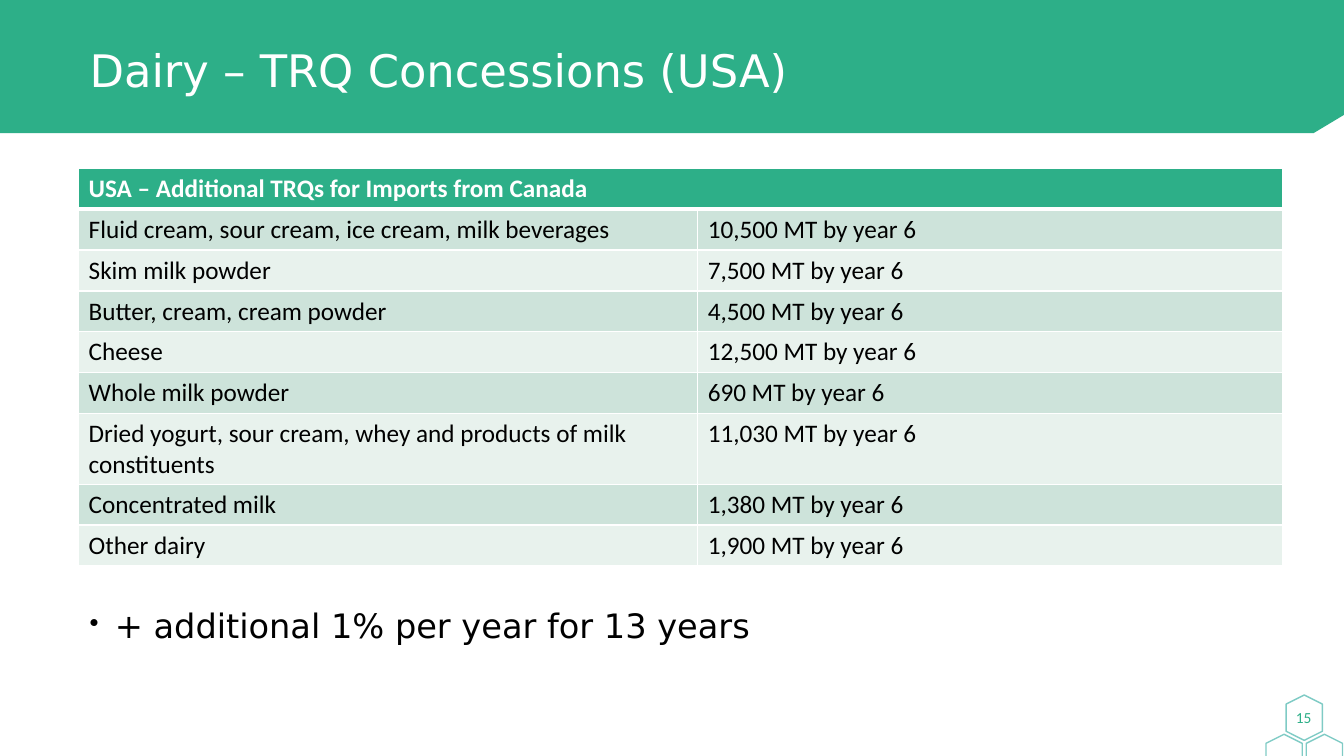
import dataclasses

import lxml.etree
import pptx
import pptx.dml.color
import pptx.enum.shapes
import pptx.enum.text
import pptx.oxml
import pptx.oxml.ns
import pptx.util

ALIGN = pptx.enum.text.PP_ALIGN
ANCHOR = pptx.enum.text.MSO_ANCHOR
qn = pptx.oxml.ns.qn


@dataclasses.dataclass(frozen=True)
class Theme:
    green: str = "2DAF88"
    teal: str = "00998D"
    white: str = "FFFFFF"
    black: str = "000000"
    bands: tuple = ("CDE3DA", "E8F2ED")
    heading_font: str = "DejaVu Sans"
    body_font: str = "Calibri"
    title_size: int = 32
    bullet_size: int = 24
    table_size: int = 18
    number_size: int = 11


THEME = Theme()
WIDTH = pptx.util.Inches(13.33)
HEIGHT = pptx.util.Inches(7.5)

QUOTAS = [
    ("Fluid cream, sour cream, ice cream, milk beverages", "10,500"),
    ("Skim milk powder", "7,500"),
    ("Butter, cream, cream powder", "4,500"),
    ("Cheese", "12,500"),
    ("Whole milk powder", "690"),
    ("Dried yogurt, sour cream, whey and products of milk constituents", "11,030"),
    ("Concentrated milk", "1,380"),
    ("Other dairy", "1,900"),
]


def across(percent):
    return round(WIDTH * percent / 100)


def down(percent):
    return round(HEIGHT * percent / 100)


def rgb(color):
    return pptx.dml.color.RGBColor.from_string(color)


def paint(fill, color):
    fill.solid()
    fill.fore_color.rgb = rgb(color)


def write(tf, text, *, size, color, font=THEME.body_font, bold=False,
          align=ALIGN.LEFT, spacing=None, bullet=None):
    p = tf.paragraphs[0]
    p.alignment = align
    if spacing:
        p.line_spacing = spacing
    if bullet:
        pPr = p._p.get_or_add_pPr()
        indent = pptx.util.Inches(0.25)
        pPr.set("marL", str(indent))
        pPr.set("indent", str(-indent))
        lxml.etree.SubElement(pPr, qn("a:buSzPct")).set("val", "80000")
        lxml.etree.SubElement(pPr, qn("a:buChar")).set("char", bullet)
    r = p.add_run()
    r.text = text
    r.font.name = font
    r.font.size = pptx.util.Pt(size)
    r.font.bold = bold
    r.font.color.rgb = rgb(color)


def add_text(s, text, left, top, width, height, *, anchor=ANCHOR.TOP, **style):
    sp = s.shapes.add_textbox(across(left), down(top), across(width), down(height))
    tf = sp.text_frame
    tf.word_wrap = True
    tf.vertical_anchor = anchor
    write(tf, text, **style)


def add_banner(s):
    corners = [(100, 0), (100, 15.2), (97.75, 17.6), (0, 17.6)]
    builder = s.shapes.build_freeform(0, 0)
    builder.add_line_segments([(across(x), down(y)) for x, y in corners])
    sp = builder.convert_to_shape()
    sp.shadow.inherit = False
    paint(sp.fill, THEME.green)
    sp.line.fill.background()


def add_hexagon(s, center_x, center_y):
    width, height = pptx.util.Inches(0.45), pptx.util.Inches(0.36)
    sp = s.shapes.add_shape(
        pptx.enum.shapes.MSO_SHAPE.HEXAGON,
        across(center_x) - width // 2, down(center_y) - height // 2, width, height)
    sp.rotation = 90
    sp.shadow.inherit = False
    sp.fill.background()
    sp.line.width = pptx.util.Pt(1)
    paint(sp.line.fill, THEME.teal)
    color = sp.line._ln.find(".//" + qn("a:srgbClr"))
    lxml.etree.SubElement(color, qn("a:alpha")).set("val", "50000")


def add_border(cell, side, points):
    ln = lxml.etree.SubElement(cell._tc.get_or_add_tcPr(), qn("a:ln" + side))
    ln.set("w", str(pptx.util.Pt(points)))
    fill = lxml.etree.SubElement(ln, qn("a:solidFill"))
    lxml.etree.SubElement(fill, qn("a:srgbClr")).set("val", THEME.white)


def format_cell(cell, row):
    heavy = {0: "B", 1: "T"}.get(row)
    for side in "LRTB":
        add_border(cell, side, 3 if side == heavy else 1)
    paint(cell.fill, THEME.bands[(row - 1) % 2] if row else THEME.green)


def add_quota_table(s, heading, quotas, left, top, columns, row_height):
    rows = [(heading, "")] + [(name, f"{amount} MT by year 6") for name, amount in quotas]
    table = s.shapes.add_table(
        len(rows), len(columns), across(left), down(top),
        across(sum(columns)), down(row_height * len(rows))).table
    for column, width in zip(table.columns, columns):
        column.width = across(width)
    table.cell(0, 0).merge(table.cell(0, len(columns) - 1))
    for i, texts in enumerate(rows):
        table.rows[i].height = down(row_height)
        for j, text in enumerate(texts):
            cell = table.cell(i, j)
            format_cell(cell, i)
            if text:
                write(cell.text_frame, text, size=THEME.table_size, bold=i == 0,
                      color=THEME.black if i else THEME.white)


def main():
    prs = pptx.Presentation()
    prs.slide_width, prs.slide_height = WIDTH, HEIGHT
    s = prs.slides.add_slide(prs.slide_layouts[6])
    add_banner(s)
    for x, y in [(97.04, 94.93), (98.54, 100.13), (95.54, 100.13)]:
        add_hexagon(s, x, y)
    add_text(s, "Dairy – TRQ Concessions (USA)", 5.93, 2.53, 88.22, 14.27,
             anchor=ANCHOR.MIDDLE, size=THEME.title_size, color=THEME.white,
             font=THEME.heading_font, spacing=0.9)
    add_text(s, "15", 95.5, 92.67, 3, 4.4, anchor=ANCHOR.MIDDLE, align=ALIGN.CENTER,
             size=THEME.number_size, color=THEME.green)
    add_quota_table(s, "USA – Additional TRQs for Imports from Canada", QUOTAS,
                    5.85, 22.27, (46.06, 43.51), 5.41)
    add_text(s, "+ additional 1% per year for 13 years", 5.93, 80, 92.2, 6.8,
             size=THEME.bullet_size, color=THEME.black, font=THEME.heading_font,
             spacing=0.9, bullet="•")
    prs.save("out.pptx")


if __name__ == "__main__":
    main()
